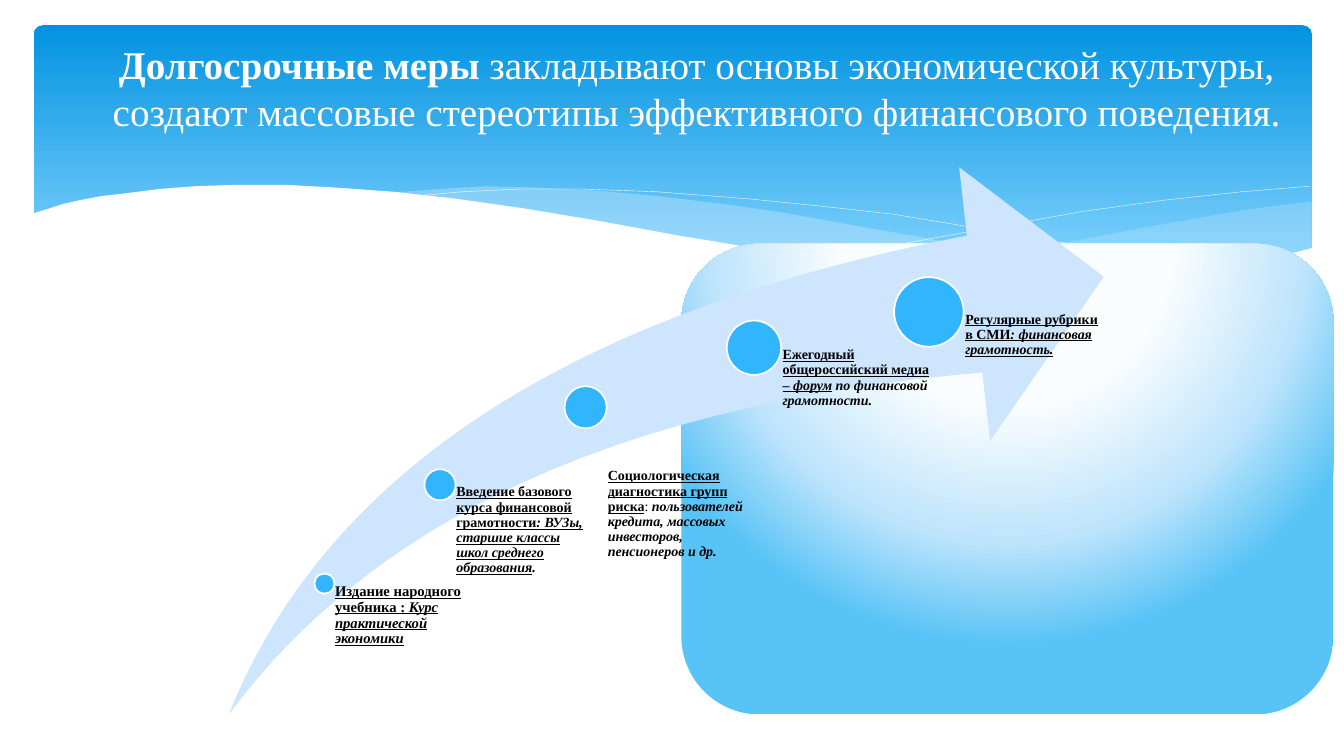
from pptx import Presentation
from pptx.dml.color import RGBColor
from pptx.enum.shapes import MSO_SHAPE as Shape
from pptx.enum.text import MSO_ANCHOR as Anchor, MSO_AUTO_SIZE as AutoSize, PP_ALIGN as Align
from pptx.oxml import parse_xml
from pptx.oxml.ns import nsdecls, qn
from pptx.util import Pt

WHITE = RGBColor(0xFF, 0xFF, 0xFF)
BLACK = RGBColor(0, 0, 0)
BAND_TOP = RGBColor(0x02, 0x93, 0xE0)
BAND_BOTTOM = RGBColor(0x83, 0xD3, 0xFE)
WAVE = RGBColor(0xC6, 0xE7, 0xFC)
PANEL_CENTRE = RGBColor(0xFA, 0xFD, 0xFE)
PANEL_MIDDLE = RGBColor(0xBE, 0xE4, 0xFC)
PANEL_EDGE = RGBColor(0x58, 0xC3, 0xF6)
ARROW = RGBColor(0xCE, 0xE5, 0xFE)
DOT = RGBColor(0x31, 0xB6, 0xFD)
FONT = "Times New Roman"
LINEAR = '<a:lin ang="5400000" scaled="0"/>'
RADIAL = '<a:path path="circle"><a:fillToRect l="20000" t="-40000" r="20000" b="140000"/></a:path>'

RIGHT_WAVE = [
    (936.7, 144), (910.8, 146.9), (883.4, 151.2), (855.4, 155.5), (825.8, 160.6), (772.6, 170.6),
    (723.6, 178.6), (677.5, 185), (635, 190.8), (676.8, 195.1), (726.5, 198.7), (771.1, 200.2),
    (810.7, 199.4), (845.3, 196.6), (877, 192.2), (905, 186.5), (936.7, 177.8)]
MIDDLE_WAVE = [
    (856.8, 196.6), (803.5, 190.8), (744.5, 182.9), (677.5, 172.8), (604.1, 159.8), (560.2, 151.9),
    (519.1, 146.2), (469.4, 139.7), (424.1, 136.1), (383, 133.9), (347, 133.2), (314.6, 134.6),
    (275, 137.5), (328.3, 143.3), (388.1, 151.9), (431.3, 159.8), (508.3, 172.8), (577.4, 183.6),
    (638.6, 191.5), (693.4, 197.3), (741.6, 199.4), (784.8, 200.2), (823, 199.4)]
FALLING_LINE = [
    (296.6, 140.4), (329.8, 136.8), (371.5, 134.6), (415.4, 134.6), (469.4, 136.8), (534.2, 141.8),
    (583.9, 146.9), (637.9, 153.4), (698.4, 162.7), (763.2, 173.5), (833.8, 187.9), (871.2, 195.8)]
RISING_LINE = [
    (589, 185), (645.1, 173.5), (717.8, 160.6), (774, 151.2), (831.6, 143.3), (887, 136.8), (936, 133.2)]
WHITE_WAVE = [
    (938.2, 177.1), (902.9, 186.5), (862.6, 193.7), (816.5, 198), (776.2, 199.4), (730.8, 198),
    (679.7, 194.4), (621.4, 188.6), (555.8, 180), (483.1, 167.8), (429.1, 158.4), (375.1, 149),
    (326.2, 141.8), (280.8, 136.8), (239.8, 133.9), (203, 132.5), (169.2, 132.5), (139.7, 133.2),
    (113.8, 134.6), (91.4, 137.5), (72.7, 140.4), (56.9, 143.3), (43.9, 146.2), (34.6, 149),
    (22.3, 153.4), (22.3, 236.9), (938.2, 236.9)]

HEADING = {"bold": True, "underline": True}
DETAIL = {"bold": True, "italic": True}
LINKED = {**HEADING, **DETAIL}
MILESTONES = [
    (231.8, 416.9, 14.4, 103.7, 10.5, 0, [
        ("Издание народного учебника : ", HEADING), ("Курс практической экономики", LINKED)]),
    (314.3, 346.3, 22.3, 103.7, 10, 0, [
        ("Введение базового курса финансовой грамотности", HEADING),
        (": ВУЗы, старшие классы школ среднего образования", LINKED), (".", DETAIL)]),
    (418.3, 290.9, 30.2, 121, 10, 44, [
        ("Социологическая диагностика групп риска", HEADING), (": ", {}),
        ("пользователей кредита, массовых инвесторов, пенсионеров и др.", DETAIL)]),
    (538.6, 248.4, 38.9, 125.3, 10, 0, [
        ("Ежегодный общероссийский медиа – ", HEADING), ("форум", LINKED),
        (" по финансовой грамотности.", DETAIL)]),
    (663.5, 222.8, 49.7, 125.3, 10, 0, [
        ("Регулярные рубрики в СМИ", HEADING), (": финансовая грамотность.", LINKED)]),
]


def add_text(paragraph, text, size=10, color=BLACK, bold=False, italic=False, underline=False):
    """Append a formatted run to the paragraph."""
    run = paragraph.add_run()
    run.text = text
    font = run.font
    font.name, font.size, font.color.rgb = FONT, Pt(size), color
    font.bold, font.italic, font.underline = bold, italic, underline


def paint(shape, fill=None, line=None, line_width=0.25, alpha=None):
    """Set the fill and outline of a shape and drop its shadow."""
    shape.shadow.inherit = False
    if fill is None:
        shape.fill.background()
    else:
        shape.fill.solid()
        shape.fill.fore_color.rgb = fill
    if alpha is not None:
        color = shape._element.spPr.find(qn("a:solidFill"))[0]
        color.append(parse_xml(f'<a:alpha {nsdecls("a")} val="{alpha * 1000}"/>'))
    if line is None:
        shape.line.fill.background()
    else:
        shape.line.color.rgb = line
        shape.line.width = Pt(line_width)


def paint_gradient(shape, stops, direction):
    """Fill a shape with a gradient of (percent, colour) stops."""
    paint(shape, WHITE)
    marks = "".join(f'<a:gs pos="{percent * 1000}"><a:srgbClr val="{color}"/></a:gs>'
                    for percent, color in stops)
    gradient = parse_xml(f'<a:gradFill {nsdecls("a")} rotWithShape="1">'
                         f'<a:gsLst>{marks}</a:gsLst>{direction}</a:gradFill>')
    properties = shape._element.spPr
    properties.replace(properties.find(qn("a:solidFill")), gradient)


def add_preset(slide, kind, left, top, width, height):
    """Add a preset shape to the slide."""
    return slide.shapes.add_shape(kind, Pt(left), Pt(top), Pt(width), Pt(height))


def add_curve(slide, points, close=True, **look):
    """Draw an outline through the points."""
    builder = slide.shapes.build_freeform(*points[0], scale=Pt(1))
    builder.add_line_segments(points[1:], close=close)
    paint(builder.convert_to_shape(), **look)


def add_header(slide, left, top, width, height):
    """Draw the blue band with its waves."""
    band = add_preset(slide, Shape.ROUNDED_RECTANGLE, left, top, width, height)
    band.adjustments[0] = 0.034
    paint_gradient(band, [(0, BAND_TOP), (90, BAND_BOTTOM)], LINEAR)
    add_curve(slide, RIGHT_WAVE, fill=WAVE, alpha=29)
    add_curve(slide, MIDDLE_WAVE, fill=WAVE, alpha=40)
    for points in (FALLING_LINE, RISING_LINE):
        add_curve(slide, points, close=False, line=WHITE)
    add_curve(slide, WHITE_WAVE, fill=WHITE)


def add_title(slide, left, top, width, height):
    """Place the title placeholder above the band."""
    title = slide.shapes.title
    title.left, title.top, title.width, title.height = Pt(left), Pt(top), Pt(width), Pt(height)
    frame = title.text_frame
    frame.auto_size, frame.word_wrap, frame.vertical_anchor = AutoSize.NONE, True, Anchor.MIDDLE
    paragraph = frame.paragraphs[0]
    paragraph.alignment = Align.CENTER
    add_text(paragraph, "Долгосрочные меры ", size=28, color=WHITE, bold=True)
    add_text(paragraph, "закладывают основы экономической культуры, создают массовые "
             "стереотипы эффективного финансового поведения.", size=28, color=WHITE)
    title._element.getparent().append(title._element)


def add_milestone(slide, center_x, center_y, diameter, width, size, drop, runs, bottom):
    """Draw a dot and the label that starts at its centre."""
    radius = diameter / 2
    dot = add_preset(slide, Shape.OVAL, center_x - radius, center_y - radius, diameter, diameter)
    paint(dot, DOT, WHITE, 1.25)
    top = center_y + drop
    label = slide.shapes.add_textbox(Pt(center_x), Pt(top), Pt(width), Pt(bottom - top))
    frame = label.text_frame
    frame.word_wrap = True
    frame.margin_left = Pt(radius * 1.05)
    frame.margin_top = frame.margin_right = frame.margin_bottom = 0
    paragraph = frame.paragraphs[0]
    paragraph.line_spacing = 0.9
    for text, look in runs:
        add_text(paragraph, text, size=size, **look)


def add_roadmap(slide, left, top, width, height):
    """Draw the rising arrow and its milestones."""
    arrow = add_preset(slide, Shape.SWOOSH_ARROW, left, top, width, height)
    arrow.adjustments[0] = arrow.adjustments[1] = 0.25
    paint(arrow, ARROW)
    for milestone in MILESTONES:
        add_milestone(slide, *milestone, bottom=top + height)


def add_panel(slide, left, top, width, height):
    """Draw the glowing rounded panel."""
    panel = add_preset(slide, Shape.ROUNDED_RECTANGLE, left, top, width, height)
    paint_gradient(panel, [(40, PANEL_CENTRE), (74, PANEL_MIDDLE), (100, PANEL_EDGE)], RADIAL)


def main():
    """Build and save the presentation."""
    presentation = Presentation()
    presentation.slide_width, presentation.slide_height = Pt(960), Pt(540)
    slide = presentation.slides.add_slide(presentation.slide_layouts[5])
    add_header(slide, 24, 18, 913, 194.4)
    add_title(slide, 58.3, 14.4, 878.4, 95.8)
    add_panel(slide, 486.7, 174.2, 465.8, 336.2)
    add_roadmap(slide, 163.4, 119.5, 625, 391)
    presentation.save("out.pptx")


if __name__ == "__main__":
    main()
